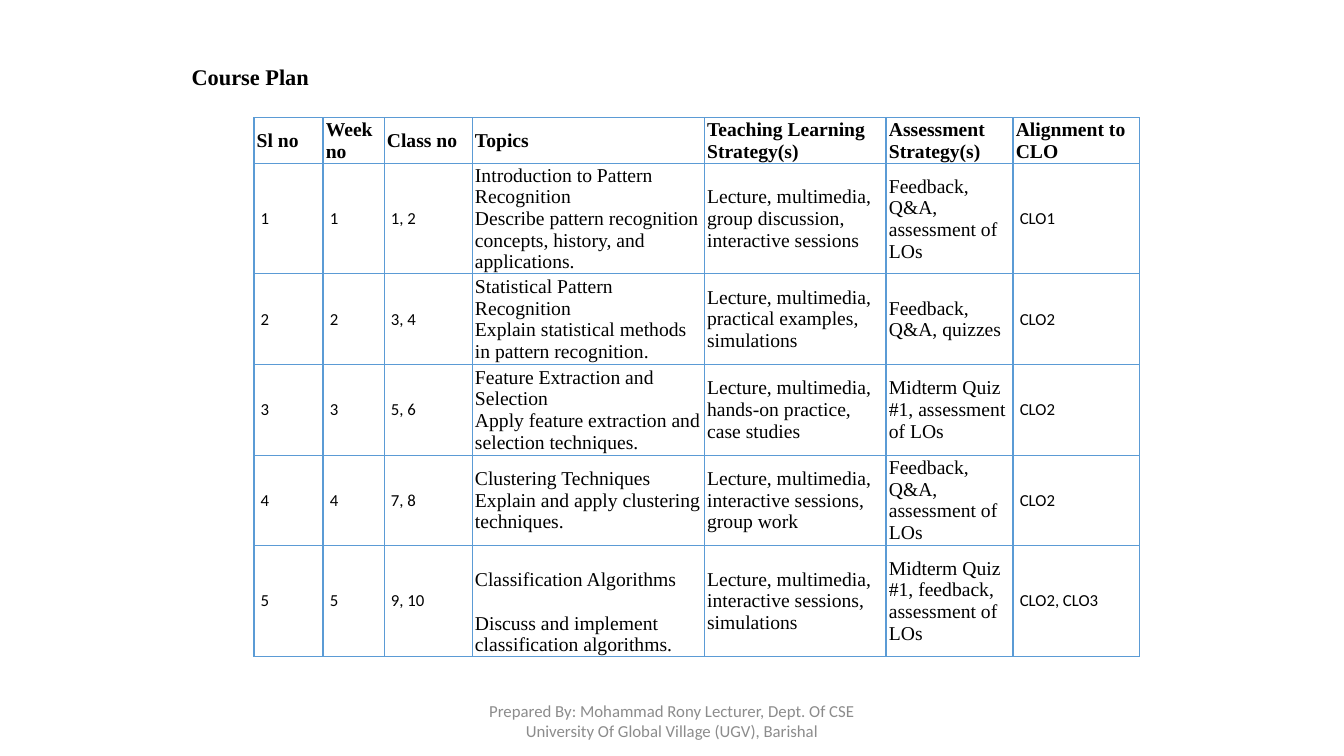
from lxml.etree import SubElement
from pptx import Presentation
from pptx.dml.color import RGBColor as RGB
from pptx.enum.text import MSO_ANCHOR as Anchor, PP_ALIGN as Align
from pptx.oxml.ns import qn
from pptx.util import Cm, Pt

SERIF, SANS = "Times New Roman", "Calibri"
BLACK, GRAY, BLUE = "000000", "8C8C8C", "5B9BD5"
WIDTHS = [1.74, 1.54, 2.22, 5.85, 4.58, 3.2, 3.18]
HEIGHTS = [1.16, 2.77, 2.29, 2.28, 2.28, 2.8]
HEAD = ["Sl no", "Week no", "Class no", "Topics", "Teaching Learning Strategy(s)",
        "Assessment Strategy(s)", "Alignment to CLO"]
PLAN = [
    ("1, 2", "Introduction to Pattern Recognition\n"
     "Describe pattern recognition concepts, history, and applications.",
     "Lecture, multimedia, group discussion, interactive sessions",
     "Feedback, Q&A, assessment of LOs", "CLO1"),
    ("3, 4", "Statistical Pattern Recognition\n"
     "Explain statistical methods in pattern recognition.",
     "Lecture, multimedia, practical examples, simulations",
     "Feedback, Q&A, quizzes", "CLO2"),
    ("5, 6", "Feature Extraction and Selection\n"
     "Apply feature extraction and selection techniques.",
     "Lecture, multimedia, hands-on practice, case studies",
     "Midterm Quiz #1, assessment of LOs", "CLO2"),
    ("7, 8", "Clustering Techniques\nExplain and apply clustering techniques.",
     "Lecture, multimedia, interactive sessions, group work",
     "Feedback, Q&A, assessment of LOs", "CLO2"),
    ("9, 10", "Classification Algorithms\nDiscuss and implement classification algorithms.",
     "Lecture, multimedia, interactive sessions, simulations",
     "Midterm Quiz #1, feedback, assessment of LOs", "CLO2, CLO3"),
]


def paint(target, color):
    """Set a font colour or a solid fill from a hex string."""
    if hasattr(target, "solid"):
        target.solid()
        target.fore_color.rgb = RGB.from_string(color)
    else:
        target.color.rgb = RGB.from_string(color)


def write(frame, text, size, face, color=BLACK, bold=False, align=Align.LEFT):
    """Fill a text frame with evenly styled paragraphs."""
    frame.text = text
    for para in frame.paragraphs:
        para.alignment = align
        font = para.font
        font.size, font.name, font.bold = Pt(size), face, bold
        paint(font, color)


def label(slide, box, text, size, face, wrap=True, pad=(0, 0), anchor=Anchor.TOP, **style):
    """Place a text box in the given box."""
    frame = slide.shapes.add_textbox(*map(Cm, box)).text_frame
    frame.word_wrap, frame.vertical_anchor = wrap, anchor
    frame.margin_left = frame.margin_right = Cm(pad[0])
    frame.margin_top = frame.margin_bottom = Cm(pad[1])
    write(frame, text, size, face, **style)


def edge(cell, color, width):
    """Draw all four borders of a cell."""
    props = cell._tc.get_or_add_tcPr()
    for spot, side in enumerate(("a:lnL", "a:lnR", "a:lnT", "a:lnB")):
        line = SubElement(props, qn(side), w=str(Pt(width)))
        fill = SubElement(line, qn("a:solidFill"))
        SubElement(fill, qn("a:srgbClr"), val=color)
        props.insert(spot, line)


def plan(slide, box):
    """Build the course plan table in the given box."""
    rows = [HEAD] + [(str(n), str(n), *row) for n, row in enumerate(PLAN, 1)]
    frame = slide.shapes.add_table(len(rows), len(HEAD), *map(Cm, box))
    table = frame.table
    for col, width in zip(table.columns, WIDTHS):
        col.width = Cm(width)
    for row, height in zip(table.rows, HEIGHTS):
        row.height = Cm(height)
    for r, row in enumerate(rows):
        for c, text in enumerate(row):
            cell = table.cell(r, c)
            serif = r == 0 or c in (3, 4, 5)
            pads = (0.07, 0.02, 0.02, 0.02) if serif else (0.17, 0.08, 0.17, 0.08)
            cell.margin_left, cell.margin_top, cell.margin_right, cell.margin_bottom = map(Cm, pads)
            cell.vertical_anchor = Anchor.MIDDLE
            paint(cell.fill, "FFFFFF")
            edge(cell, BLUE, 1)
            write(cell.text_frame, text, 14 if serif else 12,
                  SERIF if serif else SANS, bold=r == 0)
    last = table.cell(len(PLAN), 3)
    last.vertical_anchor = Anchor.BOTTOM
    last.text_frame.paragraphs[0].space_after = Pt(15.5)


def main():
    """Build and save the slide."""
    deck = Presentation()
    deck.slide_width, deck.slide_height = Cm(33.87), Cm(19.05)
    slide = deck.slides.add_slide(deck.slide_layouts[6])
    plan(slide, (6.4, 2.97, sum(WIDTHS), sum(HEIGHTS)))
    label(slide, (4.83, 1.58, 3.2, 0.7), "Course Plan", 16, SERIF, wrap=False, bold=True)
    label(slide, (11.22, 17.66, 11.43, 1.01),
          "Prepared By: Mohammad Rony Lecturer, Dept. Of CSE University Of Global Village (UGV), Barishal",
          12, SANS, pad=(0.25, 0.13), anchor=Anchor.MIDDLE, color=GRAY, align=Align.CENTER)
    deck.save("out.pptx")


if __name__ == "__main__":
    main()
